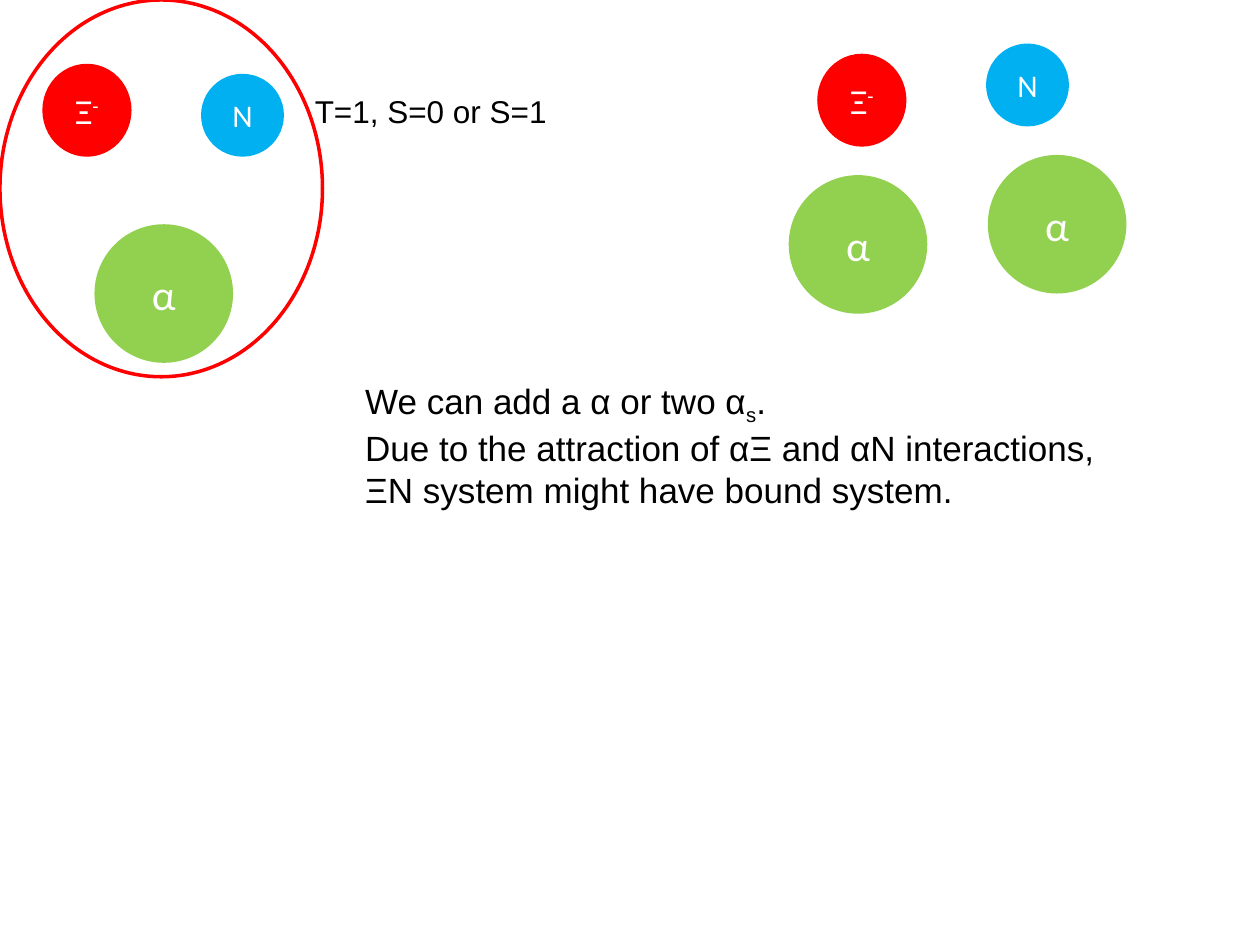
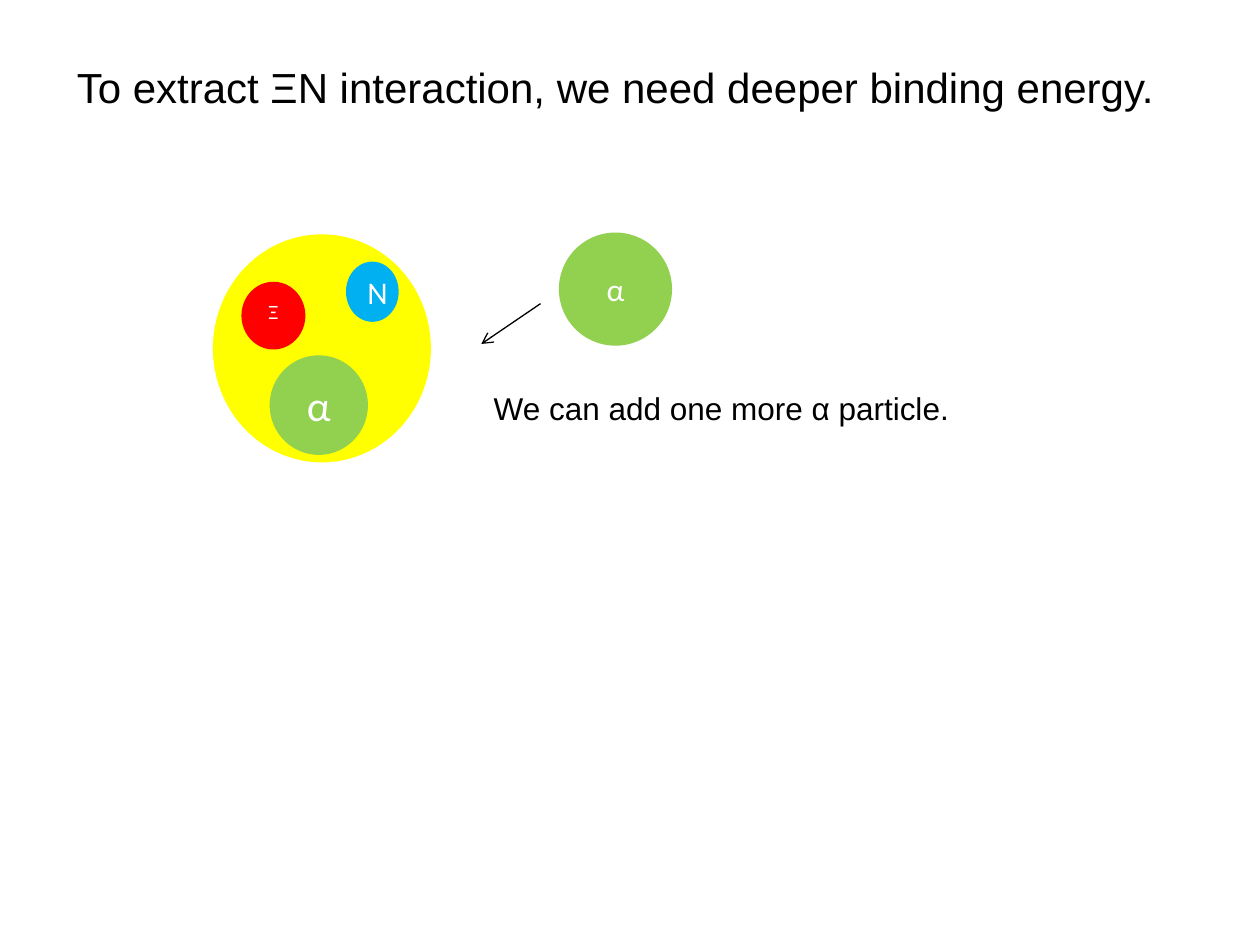
import pptx
import pptx.util
import pptx.dml.color
import pptx.enum.shapes
import pptx.enum.text
import pptx.oxml.ns
import lxml.etree

Inches = pptx.util.Inches
Pt = pptx.util.Pt

COLORS = {
    "text": "000000",
    "label": "FFFFFF",
    "nucleon": "00B0F0",
    "xi": "FF0000",
    "alpha": "92D050",
    "nucleus": "FFFF00",
}
TEXT_FONT = "Arial"
LABEL_FONT = "Calibri"


def rgb(name):
    return pptx.dml.color.RGBColor.from_string(COLORS[name])


def write_runs(paragraph, parts, size, font, color):
    for text, baseline in parts:
        run = paragraph.add_run()
        run.text = text
        run.font.size = Pt(size)
        run.font.name = font
        run.font.color.rgb = rgb(color)
        if baseline:
            run._r.get_or_add_rPr().set("baseline", str(baseline * 1000))


def add_ellipse(shapes, box, fill=None, outline=None):
    ellipse = shapes.add_shape(
        pptx.enum.shapes.MSO_SHAPE.OVAL, *map(Inches, box))
    ellipse.shadow.inherit = False
    if fill:
        ellipse.fill.solid()
        ellipse.fill.fore_color.rgb = rgb(fill)
    else:
        ellipse.fill.background()
    if outline:
        ellipse.line.color.rgb = rgb(outline)
        ellipse.line.width = Pt(2)
    else:
        ellipse.line.fill.background()
    return ellipse


def add_particle(shapes, box, kind, parts, size, outlined=True):
    particle = add_ellipse(shapes, box, kind, kind if outlined else None)
    frame = particle.text_frame
    frame.vertical_anchor = pptx.enum.text.MSO_ANCHOR.MIDDLE
    paragraph = frame.paragraphs[0]
    paragraph.alignment = pptx.enum.text.PP_ALIGN.CENTER
    write_runs(paragraph, parts, size, LABEL_FONT, "label")


def add_nucleon(shapes, box):
    add_particle(shapes, box, "nucleon", [("N", 0)], 18)


def add_xi_minus(shapes, left, top):
    add_particle(shapes, (left, top, 0.68, 0.71), "xi",
                 [("Ξ", 0), ("-", 30)], 20)


def add_alpha(shapes, box, size=24, outlined=False):
    add_particle(shapes, box, "alpha", [("α", 0)], size, outlined)


def add_note(slide, box, lines, size):
    frame = slide.shapes.add_textbox(*map(Inches, box)).text_frame
    frame.word_wrap = False
    frame.auto_size = pptx.enum.text.MSO_AUTO_SIZE.SHAPE_TO_FIT_TEXT
    for index, parts in enumerate(lines):
        paragraph = frame.add_paragraph() if index else frame.paragraphs[0]
        write_runs(paragraph, parts, size, TEXT_FONT, "text")


def set_title(slide, box, text):
    title = slide.shapes.title
    title.left, title.top, title.width, title.height = map(Inches, box)
    frame = title.text_frame
    frame.auto_size = pptx.enum.text.MSO_AUTO_SIZE.NONE
    frame.vertical_anchor = pptx.enum.text.MSO_ANCHOR.TOP
    paragraph = frame.paragraphs[0]
    paragraph.alignment = pptx.enum.text.PP_ALIGN.LEFT
    write_runs(paragraph, [(text, 0)], 24, TEXT_FONT, "text")


def add_arrow(slide, start, end):
    arrow = slide.shapes.add_connector(
        pptx.enum.shapes.MSO_CONNECTOR.STRAIGHT, *map(Inches, start + end))
    arrow.line.color.rgb = rgb("text")
    arrow.line.width = Pt(0.75)
    qn = pptx.oxml.ns.qn
    line = arrow.line._get_or_add_ln()
    lxml.etree.SubElement(line, qn("a:tailEnd")).set("type", "arrow")
    lxml.etree.SubElement(arrow._element.spPr, qn("a:effectLst"))


def build_added_alphas(presentation):
    slide = presentation.slides.add_slide(presentation.slide_layouts[6])
    shapes = slide.shapes
    add_nucleon(shapes, (1.61, 0.6, 0.63, 0.63))
    add_xi_minus(shapes, 0.35, 0.52)
    add_note(slide, (2.4, 0.68, 2.06, 0.4), [[("T=1, S=0 or S=1", 0)]], 18)
    for left, top in [(0.75, 1.78), (7.84, 1.23), (6.26, 1.39)]:
        add_alpha(shapes, (left, top, 1.1, 1.1))
    add_note(slide, (2.8, 2.96, 6.03, 1.11), [
        [("We can add a α or two α", 0), ("s", -25), (".", 0)],
        [("Due to the attraction of αΞ and αN interactions,", 0)],
        [("ΞN system might have bound system.", 0)],
    ], 20)
    add_nucleon(shapes, (7.84, 0.36, 0.63, 0.63))
    add_xi_minus(shapes, 6.5, 0.44)
    add_ellipse(shapes, (0, 0, 2.56, 2.99), outline="xi")


def build_deeper_binding(presentation):
    slide = presentation.slides.add_slide(presentation.slide_layouts[5])
    set_title(slide, (0.51, 0.44, 8.84, 0.91),
              "To extract ΞN interaction, we need deeper binding energy.")
    nucleus = slide.shapes.add_group_shape().shapes
    add_ellipse(nucleus, (1.69, 1.86, 1.73, 1.81), "nucleus")
    add_nucleon(nucleus, (2.76, 2.09, 0.39, 0.45))
    add_alpha(nucleus, (2.14, 2.82, 0.78, 0.79))
    add_particle(nucleus, (1.93, 2.25, 0.48, 0.51), "xi", [("Ξ", 30)], 20)
    add_alpha(slide.shapes, (4.45, 1.86, 0.87, 0.87), 18, True)
    add_arrow(slide, (4.29, 2.41), (3.82, 2.73))
    add_note(slide, (3.82, 3.04, 3.85, 0.4),
             [[("We can add one more α particle.", 0)]], 18)


def main():
    presentation = pptx.Presentation()
    presentation.slide_width = Inches(10)
    presentation.slide_height = Inches(7.5)
    build_added_alphas(presentation)
    build_deeper_binding(presentation)
    presentation.save("out.pptx")


if __name__ == "__main__":
    main()
